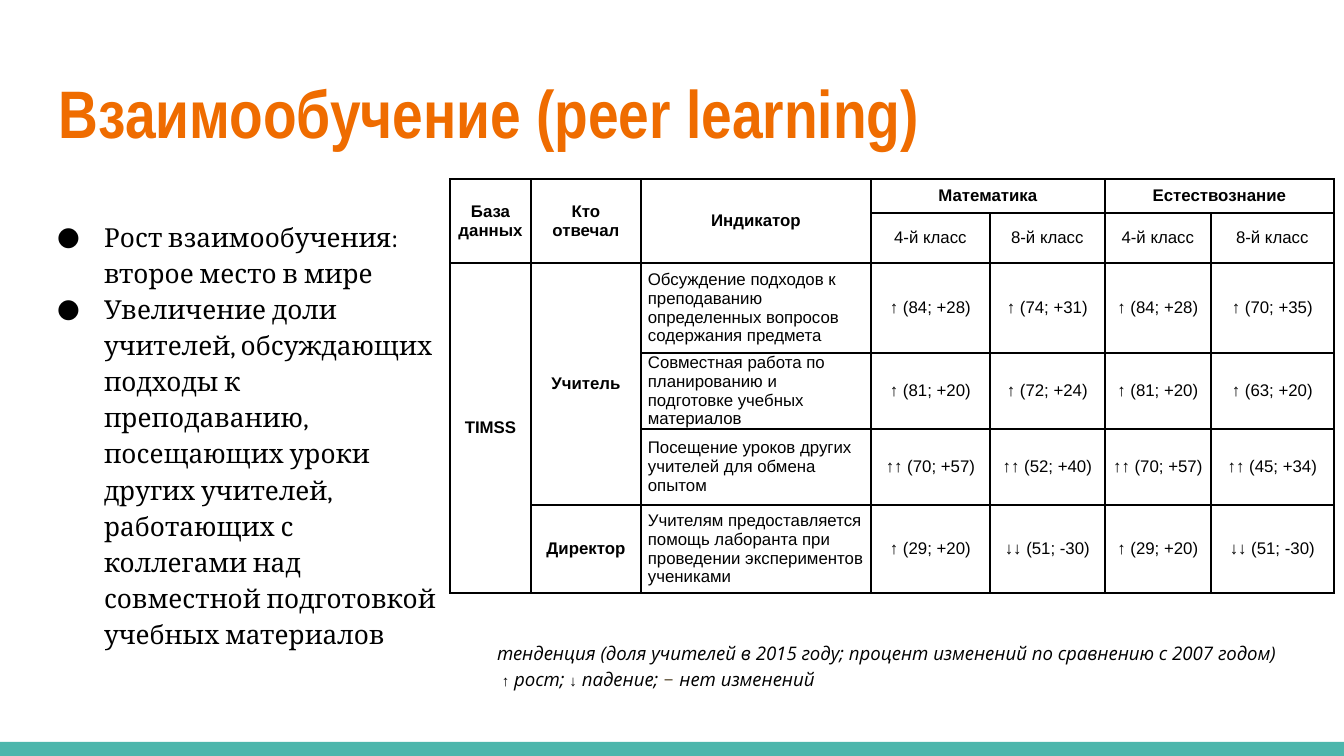
"""Builds the slide on peer learning among teachers."""
import dataclasses

import lxml.etree
import pptx
import pptx.dml.color
import pptx.enum.shapes
import pptx.enum.text
import pptx.oxml.ns
import pptx.slide
import pptx.util

RGBColor = pptx.dml.color.RGBColor
ALIGN = pptx.enum.text.PP_ALIGN
ANCHOR = pptx.enum.text.MSO_ANCHOR
qn = pptx.oxml.ns.qn

BLACK = RGBColor(0x00, 0x00, 0x00)
WHITE = RGBColor(0xFF, 0xFF, 0xFF)
ORANGE = RGBColor(0xEF, 0x6C, 0x00)
TEAL = RGBColor(0x4D, 0xB6, 0xAC)
BROWN = RGBColor(0x69, 0x5D, 0x46)

TITLE = "Взаимообучение (peer learning)"
POINTS = [
    "Рост взаимообучения: второе место в мире",
    "Увеличение доли учителей, обсуждающих подходы к преподаванию, "
    "посещающих уроки других учителей, работающих с коллегами над "
    "совместной подготовкой учебных материалов",
]
COLUMNS = [81, 110, 230, 119, 115, 106, 123]
ROWS = [34, 50, 90, 76, 76, 88]
MERGES = [(0, 0, 1, 0), (0, 1, 1, 1), (0, 2, 1, 2), (0, 3, 0, 4),
          (0, 5, 0, 6), (2, 0, 5, 0), (2, 1, 4, 1)]
CELLS = [
    ["База данных", "Кто отвечал", "Индикатор", "Математика", "", "Естествознание", ""],
    ["", "", "", "4-й класс", "8-й класс", "4-й класс", "8-й класс"],
    ["TIMSS", "Учитель",
     "Обсуждение подходов к преподаванию определенных вопросов содержания предмета",
     "↑ (84; +28)", "↑ (74; +31)", "↑ (84; +28)", "↑ (70; +35)"],
    ["", "", "Совместная работа по планированию и подготовке учебных материалов",
     "↑ (81; +20)", "↑ (72; +24)", "↑ (81; +20)", "↑ (63; +20)"],
    ["", "", "Посещение уроков других учителей для обмена опытом",
     "↑↑ (70; +57)", "↑↑ (52; +40)", "↑↑ (70; +57)", "↑↑ (45; +34)"],
    ["", "Директор",
     "Учителям предоставляется помощь лаборанта при проведении экспериментов учениками",
     "↑ (29; +20)", "↓↓ (51; -30)", "↑ (29; +20)", "↓↓ (51; -30)"],
]
NOTE = ("Open Sans", 10, BLACK, False, True)
ARROW = ("Arial", 8, BLACK)
DASH = ("Calibri", 12, BROWN)
LEGEND = [
    [("тенденция (доля учителей в 2015 году; процент изменений "
      "по сравнению с 2007 годом)", NOTE)],
    [(" ", NOTE), ("↑", ARROW), (" рост; ", NOTE), ("↓", ARROW),
     (" падение; ", NOTE), ("– ", DASH), ("нет изменений", NOTE)],
]


def px(n):
    """Turns px into EMU."""
    return pptx.util.Emu(round(n * 914400 / 134.4))


@dataclasses.dataclass
class Deck:
    """Holds the style and the current slide."""
    s: pptx.slide.Slide
    inset: int = 13

    def style(self, font, name, size, color, bold=False, italic=False):
        """Formats a font."""
        font.name, font.size = name, pptx.util.Pt(size)
        font.bold, font.italic = bold, italic
        font.color.rgb = color

    def place(self, sp, x, y, w, h):
        """Moves a text shape and returns its prepared frame."""
        sp.left, sp.top, sp.width, sp.height = px(x), px(y), px(w), px(h)
        tf = sp.text_frame
        tf.word_wrap = True
        tf.auto_size = pptx.enum.text.MSO_AUTO_SIZE.NONE
        tf.vertical_anchor = ANCHOR.TOP
        tf.margin_left = tf.margin_right = px(self.inset)
        tf.margin_top = tf.margin_bottom = px(self.inset)
        return tf

    def bar(self, x, y, w, h, color):
        """Draws a plain filled bar."""
        sp = self.s.shapes.add_shape(
            pptx.enum.shapes.MSO_SHAPE.RECTANGLE, px(x), px(y), px(w), px(h))
        sp.shadow.inherit = False
        sp.fill.solid()
        sp.fill.fore_color.rgb = color
        sp.line.fill.background()

    def title(self, text, *box):
        """Fills the title placeholder."""
        tf = self.place(self.s.shapes.title, *box)
        p = tf.paragraphs[0]
        p.text, p.alignment = text, ALIGN.LEFT
        self.style(p.font, "Arial Narrow", 36, ORANGE, True)

    def bullets(self, items, *box):
        """Fills the body placeholder with a bulleted list."""
        tf = self.place(self.s.placeholders[1], *box)
        tf.text = "\n".join(items)
        for p in tf.paragraphs:
            p.line_spacing = 1.15
            p.space_before = p.space_after = pptx.util.Pt(0)
            self.style(p.font, "Cambria", 14, BLACK)
            pPr = p._p.get_or_add_pPr()
            pPr.set("marL", str(px(67)))
            pPr.set("indent", str(px(-47)))
            color = lxml.etree.Element(qn("a:buClr"))
            lxml.etree.SubElement(color, qn("a:srgbClr"), val=str(BLACK))
            font = lxml.etree.Element(qn("a:buFont"), typeface="Cambria")
            char = lxml.etree.Element(qn("a:buChar"), char="●")
            for mark in (color, font, char):
                pPr.find(qn("a:defRPr")).addprevious(mark)

    def cell(self, cell, text, bold, align):
        """Formats one table cell with its borders and text."""
        tcPr = cell._tc.get_or_add_tcPr()
        for side in ("lnL", "lnR", "lnT", "lnB"):
            ln = lxml.etree.SubElement(tcPr, qn(f"a:{side}"), w=str(pptx.util.Pt(1)))
            fill = lxml.etree.SubElement(ln, qn("a:solidFill"))
            lxml.etree.SubElement(fill, qn("a:srgbClr"), val=str(BLACK))
        cell.fill.solid()
        cell.fill.fore_color.rgb = WHITE
        cell.margin_left = cell.margin_right = px(7)
        cell.margin_top = cell.margin_bottom = 0
        cell.vertical_anchor = ANCHOR.MIDDLE
        p = cell.text_frame.paragraphs[0]
        p.text, p.alignment = text, align
        self.style(p.font, "Arial", 9, BLACK, bold)

    def table(self, x, y, columns, rows, cells, merges):
        """Adds the table of indicators."""
        table = self.s.shapes.add_table(
            len(rows), len(columns), px(x), px(y), px(sum(columns)), px(sum(rows))).table
        table.first_row = table.horz_banding = False
        for column, width in zip(table.columns, columns):
            column.width = px(width)
        for row, height in zip(table.rows, rows):
            row.height = px(height)
        for i, line in enumerate(cells):
            for j, text in enumerate(line):
                align = ALIGN.LEFT if j == 2 and i > 1 else ALIGN.CENTER
                self.cell(table.cell(i, j), text, i == 0 or j < 2, align)
        for top, left, bottom, right in merges:
            table.cell(top, left).merge(table.cell(bottom, right))

    def text(self, lines, *box):
        """Adds a text box of styled runs."""
        tf = self.place(self.s.shapes.add_textbox(0, 0, 0, 0), *box)
        for i, line in enumerate(lines):
            p = tf.add_paragraph() if i else tf.paragraphs[0]
            for text, look in line:
                r = p.add_run()
                r.text = text
                self.style(r.font, *look)


def main():
    """Builds and saves the deck."""
    prs = pptx.Presentation()
    prs.slide_width, prs.slide_height = px(1344), px(756)
    deck = Deck(prs.slides.add_slide(prs.slide_layouts[1]))
    deck.bar(0, 742, 1344, 14, TEAL)
    deck.title(TITLE, 46, 58, 1253, 103)
    deck.bullets(POINTS, 24, 204, 427, 419)
    deck.table(450, 179, COLUMNS, ROWS, CELLS, MERGES)
    deck.text(LEGEND, 484, 629, 816, 81)
    prs.save("out.pptx")


if __name__ == "__main__":
    main()
